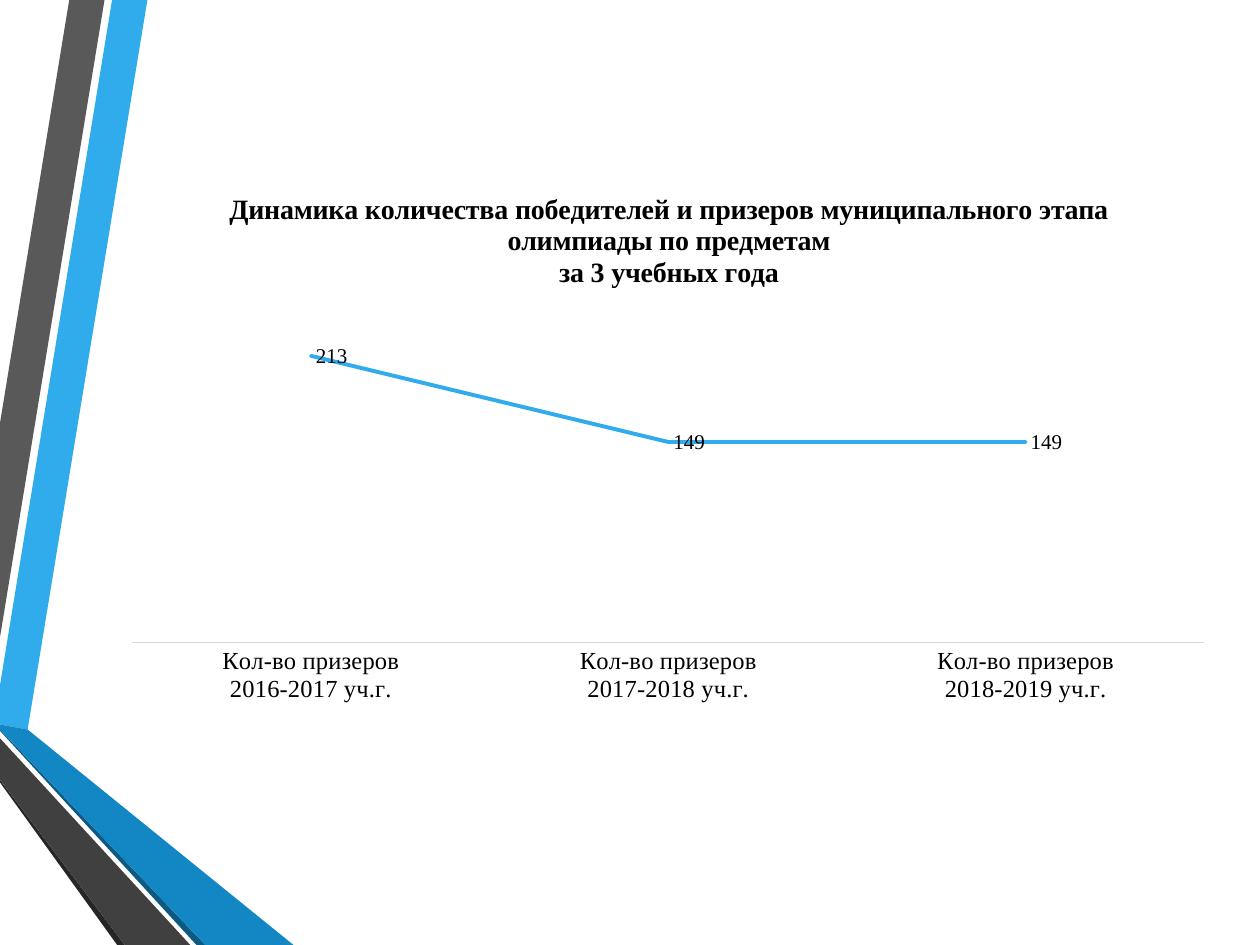
from lxml import etree
from pptx import Presentation
from pptx import util as u
from pptx.chart.data import CategoryChartData
from pptx.dml.color import RGBColor
from pptx.enum import chart as ch
from pptx.oxml.ns import qn

W, H = 10, 7.5
CHART_X, CHART_Y, CHART_W, CHART_H = 0.87, 1.35, 8.86, 4.55
UNITS = 100
COLORS = {"sky": "30ACEC", "gray": "595959", "black": "262626", "navy": "0C5A82",
          "blue": "1287C3", "dark": "404040", "text": "000000", "axis": "D9D9D9"}
RIBBONS = [
    ("sky", [(0, 5.44), (0, 5.75), (0.22, 5.79), (1.17, 0), (0.89, 0)]),
    ("gray", [(0.83, 0), (0.55, 0), (0, 3.36), (0, 5.06)]),
    ("black", [(0, 6.19), (0, 6.21), (0.93, H), (0.99, H)]),
    ("navy", [(0, 5.79), (0, 5.8), (1.56, H), (1.63, H)]),
    ("blue", [(0, 5.79), (1.63, H), (2.33, H), (0.22, 5.79), (0, 5.75)]),
    ("dark", [(0, 6.19), (0.99, H), (1.51, H), (0, 5.86)]),
]
TITLE = ["Динамика количества победителей и призеров муниципального этапа "
         "олимпиады по предметам", "за 3 учебных года"]
WINNERS = {"2016-2017": 213, "2017-2018": 149, "2018-2019": 149}
SERIF = "Times New Roman"


def rgb(name):
    return RGBColor.from_string(COLORS[name])


def style(font, **values):
    font.color.rgb = rgb("text")
    for key, value in values.items():
        setattr(font, key, value)


def add_ribbon(s, color, points):
    pts = [(round(x * UNITS), round(y * UNITS)) for x, y in points]
    fb = s.shapes.build_freeform(*pts[0], scale=u.Inches(1) / UNITS)
    fb.add_line_segments(pts[1:], close=True)
    sp = fb.convert_to_shape()
    sp.shadow.inherit = False
    sp.fill.solid()
    sp.fill.fore_color.rgb = rgb(color)
    sp.line.fill.background()


def set_layout(parent, **values):
    layout = parent.find(qn("c:layout"))
    if layout is None:
        layout = etree.Element(qn("c:layout"))
        before = parent.find(qn("c:tx"))
        parent.insert(0 if before is None else parent.index(before) + 1, layout)
    for child in list(layout):
        layout.remove(child)
    manual = etree.SubElement(layout, qn("c:manualLayout"))
    for key, value in values.items():
        etree.SubElement(manual, qn("c:" + key)).set("val", str(value))


def add_chart_title(chart):
    tf = chart.chart_title.text_frame
    for i, line in enumerate(TITLE):
        p = tf.paragraphs[0] if i == 0 else tf.add_paragraph()
        r = p.add_run()
        r.text = line
        style(r.font, name=SERIF, size=u.Pt(16), bold=True)
    chart.chart_title.include_in_layout = False
    set_layout(chart.chart_title._element, xMode="edge", yMode="edge",
               x=0.92 / CHART_W, y=0.14 / CHART_H)


def format_axes(chart):
    cat, val = chart.category_axis, chart.value_axis
    cat.major_tick_mark = cat.minor_tick_mark = ch.XL_TICK_MARK.NONE
    cat.format.line.color.rgb = rgb("axis")
    cat.format.line.width = u.Pt(0.75)
    style(cat.tick_labels.font, name=SERIF, size=u.Pt(14))
    for key, value in {"visible": False, "has_major_gridlines": False,
                       "minimum_scale": 0, "maximum_scale": 250}.items():
        setattr(val, key, value)


def format_series(plot):
    ser = plot.series[0]
    ser.smooth = False
    ser.marker.style = ch.XL_MARKER_STYLE.NONE
    ser.format.line.color.rgb = rgb("sky")
    ser.format.line.width = u.Pt(2.25)
    ln = ser.format.line._ln
    ln.set("cap", "rnd")
    etree.SubElement(ln, qn("a:round"))
    labels = ser.data_labels
    labels.show_value = True
    labels.position = ch.XL_LABEL_POSITION.RIGHT
    style(labels.font, name=SERIF, size=u.Pt(12))


def add_line_chart(s):
    data = CategoryChartData()
    data.categories = [f"Кол-во призеров\n{year} уч.г." for year in WINNERS]
    data.add_series("Series 1", WINNERS.values())
    box = [u.Inches(v) for v in (CHART_X, CHART_Y, CHART_W, CHART_H)]
    chart = s.shapes.add_chart(ch.XL_CHART_TYPE.LINE, *box, data).chart
    chart.has_legend = False
    style(chart.font, name="Cabin", size=u.Pt(10))
    plot = chart.plots[0]
    plot.vary_by_categories = False
    add_chart_title(chart)
    format_axes(chart)
    format_series(plot)
    set_layout(plot._element.getparent(), layoutTarget="inner", xMode="edge",
               yMode="edge", x=0.18 / CHART_W, y=1.08 / CHART_H,
               w=8.51 / CHART_W, h=2.67 / CHART_H)


def main():
    prs = Presentation()
    prs.slide_width, prs.slide_height = u.Inches(W), u.Inches(H)
    s = prs.slides.add_slide(prs.slide_layouts[6])
    for color, points in RIBBONS:
        add_ribbon(s, color, points)
    add_line_chart(s)
    prs.save("out.pptx")


if __name__ == "__main__":
    main()
